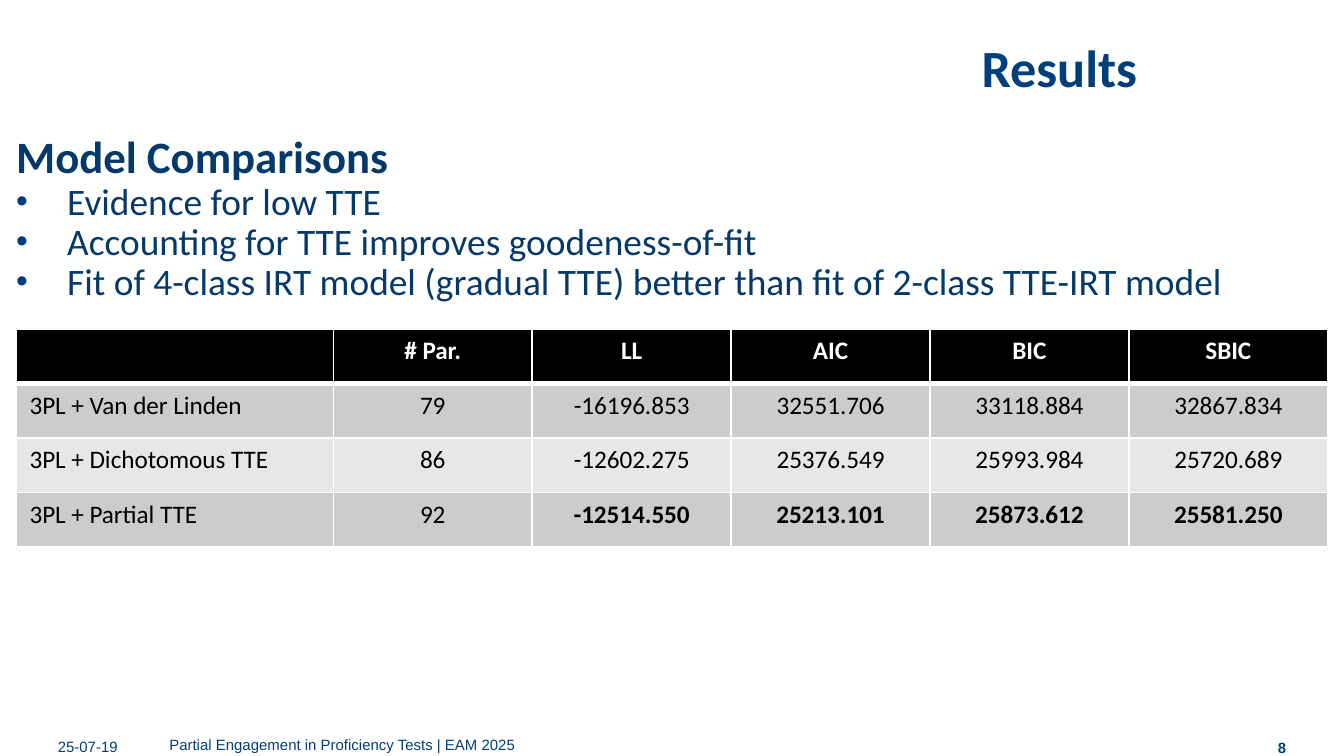
import pptx
import pptx.dml.color
import pptx.enum.text
import pptx.oxml
import pptx.oxml.ns
import pptx.util
from pptx.util import Inches

RGBColor = pptx.dml.color.RGBColor
ALIGN = pptx.enum.text.PP_ALIGN
ANCHOR = pptx.enum.text.MSO_ANCHOR

BLUE = RGBColor(0x00, 0x3E, 0x7C)
NAVY = RGBColor(0x05, 0x39, 0x6A)
BLACK = RGBColor(0x00, 0x00, 0x00)
WHITE = RGBColor(0xFF, 0xFF, 0xFF)
DARK_BAND = RGBColor(0xCC, 0xCC, 0xCC)
LIGHT_BAND = RGBColor(0xE7, 0xE7, 0xE7)


def place(box, left, top, width, height, anchor=ANCHOR.TOP):
    box.left, box.top = Inches(left), Inches(top)
    box.width, box.height = Inches(width), Inches(height)
    frame = box.text_frame
    frame.word_wrap = True
    frame.auto_size = pptx.enum.text.MSO_AUTO_SIZE.NONE
    frame.vertical_anchor = anchor
    frame.margin_left = frame.margin_right = 0
    frame.margin_top = frame.margin_bottom = 0
    return frame


def write(para, text, size, color, bold=False, font="Calibri", align=ALIGN.LEFT):
    para.alignment = align
    span = para.add_run()
    span.text = text
    span.font.name = font
    span.font.size = pptx.util.Pt(size)
    span.font.bold = bold
    span.font.color.rgb = color


# Widescreen page, 16 to 9
deck = pptx.Presentation()
deck.slide_width = Inches(10)
deck.slide_height = Inches(10 * 9 / 16)
page = deck.slides.add_slide(deck.slide_layouts[5])

# Title
title = place(page.shapes.title, 2.4, 0.22, 6.06, 0.55)
title.paragraphs[0].line_spacing = pptx.util.Pt(36.8)
write(title.paragraphs[0], "Results", 28, BLUE, bold=True, align=ALIGN.RIGHT)

# Heading and findings
findings = place(page.shapes.add_textbox(0, 0, 0, 0), 0.12, 1, 9.76, 4.41)
heading = findings.paragraphs[0]
heading.line_spacing = 0.9
write(heading, "Model Comparisons", 24, NAVY, bold=True)
for finding in (
    "Evidence for low TTE",
    "Accounting for TTE improves goodeness-of-fit",
    "Fit of 4-class IRT model (gradual TTE) better than fit of 2-class TTE-IRT model",
):
    para = findings.add_paragraph()
    para.line_spacing = 0.9
    props = para._p.get_or_add_pPr()
    props.set("marL", str(Inches(0.38)))
    props.set("indent", str(-Inches(0.38)))
    for bullet in (
        '<a:buClr {}><a:srgbClr val="003D7C"/></a:buClr>',
        '<a:buSzPct {} val="90000"/>',
        '<a:buFont {} typeface="Arial"/>',
        '<a:buChar {} char="•"/>',
    ):
        props.append(pptx.oxml.parse_xml(bullet.format(pptx.oxml.ns.nsdecls("a"))))
    write(para, finding, 20, NAVY)

# Footer: date, page number, talk
for text, left, width, anchor, align, bold, spacing in (
    ("25-07-19", 0.43, 0.71, ANCHOR.TOP, ALIGN.LEFT, False, 1.0),
    ("8", 9.02, 0.55, ANCHOR.BOTTOM, ALIGN.RIGHT, True, 1.0),
    ("Partial Engagement in Proficiency Tests | EAM 2025",
     1.26, 7.56, ANCHOR.TOP, ALIGN.LEFT, False, 0.9),
):
    footer = place(page.shapes.add_textbox(0, 0, 0, 0), left, 5.49, width, 0.14, anchor)
    footer.paragraphs[0].line_spacing = spacing
    write(footer.paragraphs[0], text, 8, BLUE, bold, "Arial", align)

# Model fit table
ROWS = [
    ("", "# Par.", "LL", "AIC", "BIC", "SBIC"),
    ("3PL + Van der Linden", "79", "-16196.853", "32551.706", "33118.884", "32867.834"),
    ("3PL + Dichotomous TTE", "86", "-12602.275", "25376.549", "25993.984", "25720.689"),
    ("3PL + Partial TTE", "92", "-12514.550", "25213.101", "25873.612", "25581.250"),
]
FILLS = [BLACK, DARK_BAND, LIGHT_BAND, DARK_BAND]
table = page.shapes.add_table(
    len(ROWS), len(ROWS[0]), Inches(0.12), Inches(2.45), Inches(9.76), Inches(1.62)
).table
for index, column in enumerate(table.columns):
    column.width = Inches(1.48 if index else 2.36)
for r, values in enumerate(ROWS):
    for c, value in enumerate(values):
        cell = table.cell(r, c)
        props = cell._tc.get_or_add_tcPr()
        for side in "LRTB":
            # The rule under the header is thicker
            thick = (r, side) in ((0, "B"), (1, "T"))
            props.append(pptx.oxml.parse_xml(
                f'<a:ln{side} {pptx.oxml.ns.nsdecls("a")} w="{pptx.util.Pt(3 if thick else 1)}">'
                f'<a:solidFill><a:srgbClr val="{WHITE}"/></a:solidFill></a:ln{side}>'
            ))
        cell.fill.solid()
        cell.fill.fore_color.rgb = FILLS[r]
        if value:
            write(
                cell.text_frame.paragraphs[0], value, 13.5,
                BLACK if r else WHITE,
                bold=r == 0 or (r == 3 and c >= 2),
                align=ALIGN.CENTER if c else ALIGN.LEFT,
            )

deck.save("out.pptx")
